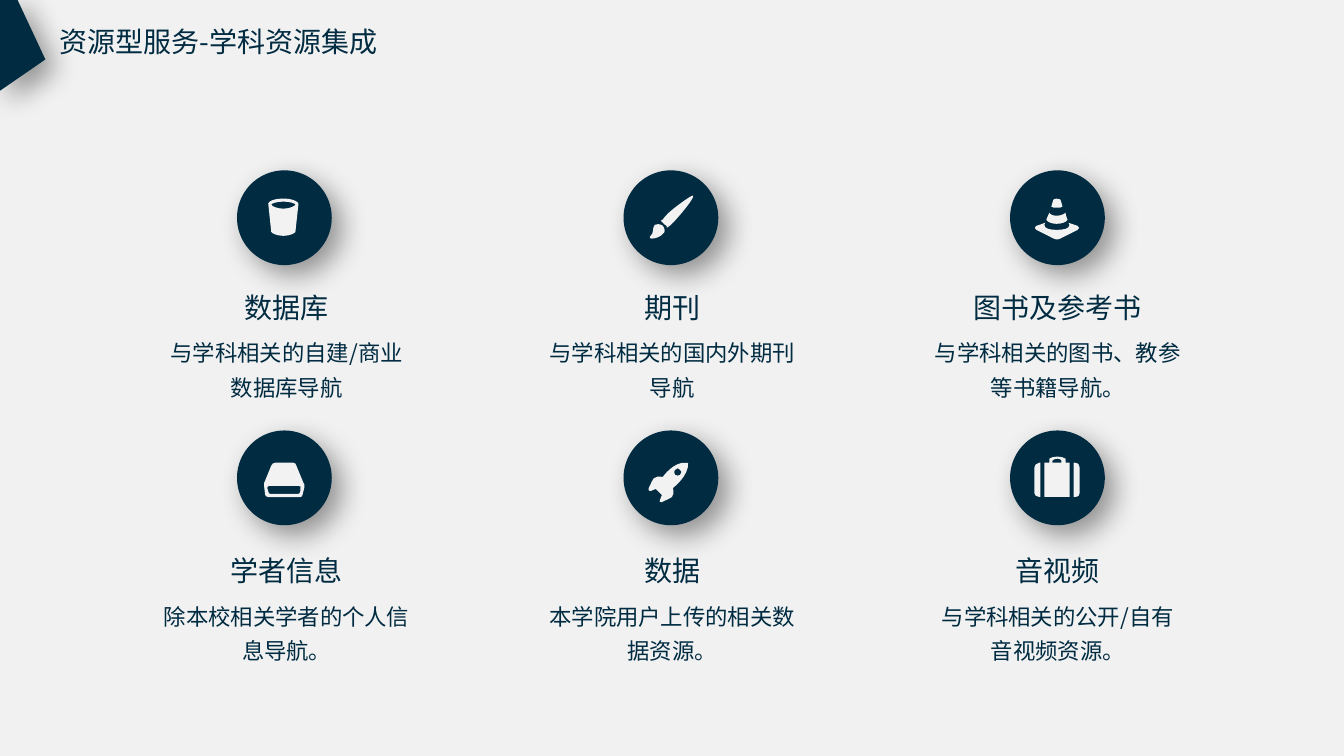
from dataclasses import dataclass

from lxml.etree import SubElement
from pptx import Presentation
from pptx.dml.color import RGBColor
from pptx.enum.shapes import MSO_SHAPE as Preset
from pptx.enum.text import MSO_ANCHOR as Anchor, MSO_AUTO_SIZE as AutoSize, PP_ALIGN as Align
from pptx.oxml.ns import qn
from pptx.shapes.base import BaseShape
from pptx.slide import Slide
from pptx.text.text import TextFrame
from pptx.util import Pt

COLORS = {"background": "F1F1F1", "navy": "002B41", "icon": "F2F2F2", "shadow": "000000"}
FONT = "Noto Sans CJK SC"
GRID_UNIT = 0.72
CIRCLE_SIZE = 67.7
CIRCLE_PITCH = (276.1, 185.8)
TEXT_PITCH = (275.4, 187.9)

Contour = list[tuple[int, ...]]

CORNER: list[Contour] = [[(17, -1), (0, -1), (0, 90), (45, 59)]]
BUCKET: list[Contour] = [
    [(46, 28), (36, 28, 31, 31, 31, 33), (34, 61), (34, 62, 39, 65, 46, 65),
     (53, 65, 58, 62, 58, 61), (61, 33), (61, 31, 55, 28, 46, 28)],
    [(46, 38), (39, 38, 34, 35, 34, 34), (34, 33, 39, 31, 46, 31),
     (53, 31, 58, 33, 58, 34), (58, 35, 53, 38, 46, 38)],
]
BRUSH: list[Contour] = [
    [(31, 54), (28, 58, 31, 62, 26, 66), (24, 69, 35, 68, 39, 63),
     (42, 61, 41, 58, 39, 55), (36, 53, 33, 53, 31, 54)],
    [(69, 25), (68, 24, 47, 39, 42, 45), (39, 48, 39, 50, 37, 50),
     (37, 51, 38, 51, 38, 51), (39, 52, 39, 52, 41, 54), (42, 54, 43, 55, 43, 56),
     (43, 57), (45, 56, 47, 54, 49, 52), (55, 46, 71, 27, 69, 25)],
]
CONE: list[Contour] = [
    [(46, 53), (52, 53, 56, 51, 57, 49), (56, 46, 55, 44, 55, 42),
     (54, 43, 51, 45, 46, 45), (42, 45, 39, 43, 39, 42),
     (38, 44, 37, 46, 36, 49), (37, 51, 41, 53, 46, 53)],
    [(46, 37), (49, 37, 51, 37, 52, 36), (51, 33, 51, 31, 50, 29),
     (50, 29, 48, 28, 46, 28), (45, 28, 43, 29, 43, 29),
     (42, 31, 42, 33, 41, 36), (42, 37, 44, 37, 46, 37)],
    [(67, 55), (58, 52), (59, 54), (59, 58, 53, 59, 46, 59), (40, 59, 34, 58, 34, 54),
     (35, 52), (26, 55), (24, 56, 24, 58, 26, 59), (42, 67), (45, 69, 48, 69, 51, 67),
     (67, 59), (69, 58, 69, 56, 67, 55)],
]
DRIVE: list[Contour] = [
    [(66, 52), (59, 35), (59, 33, 57, 32, 56, 32), (38, 32), (36, 32, 35, 33, 34, 35),
     (27, 52), (27, 52, 27, 55, 27, 56), (28, 64), (28, 65, 30, 66, 31, 66), (63, 66),
     (64, 66, 65, 65, 65, 64), (67, 56), (67, 55, 67, 52, 66, 52)],
    [(63, 57), (63, 60), (63, 62, 61, 63, 61, 63), (33, 63), (32, 63, 31, 62, 31, 60),
     (30, 57), (30, 56, 31, 55, 32, 55), (61, 55), (63, 55, 64, 56, 63, 57)],
]
ROCKET: list[Contour] = [
    [(49, 57), (49, 57, 65, 45, 64, 32), (63, 32), (50, 30, 39, 46, 39, 46),
     (29, 45, 30, 47, 25, 57), (24, 60, 26, 60, 27, 60), (29, 59, 32, 58, 32, 58),
     (38, 64), (38, 64, 37, 67, 36, 69), (35, 70, 36, 72, 38, 71), (48, 66, 51, 67, 49, 57)],
    [(51, 44), (50, 42, 50, 40, 51, 39), (53, 37, 55, 37, 56, 39),
     (58, 40, 58, 42, 56, 44), (55, 45, 53, 45, 51, 44)],
]
SUITCASE: list[Contour] = [
    [(64, 32), (63, 32), (63, 66), (64, 66), (68, 66, 69, 64, 69, 62), (69, 37),
     (69, 35, 68, 32, 64, 32)],
    [(24, 37), (24, 62), (24, 64, 26, 66, 29, 66), (30, 66), (30, 32), (29, 32),
     (26, 32, 24, 35, 24, 37)],
    [(55, 28), (53, 27, 51, 26, 47, 26), (43, 26, 40, 27, 39, 28), (39, 32), (34, 32),
     (34, 66), (59, 66), (59, 32), (55, 32)],
    [(51, 32), (42, 32), (42, 30), (43, 29, 44, 28, 47, 28), (49, 28, 51, 29, 51, 30)],
]


@dataclass(frozen=True)
class Resource:
    heading: str
    description: str
    icon: list[Contour]


@dataclass(frozen=True)
class TextStyle:
    left: float
    top: float
    width: float
    height: float
    size: int
    spacing: float


HEADING = TextStyle(136.3, 203.8, 136.8, 31.7, 20, 1.0)
DESCRIPTION = TextStyle(109.4, 233.3, 190.8, 57.6, 16, 1.3)
TITLE = TextStyle(35, 13.7, 245.5, 31.7, 20, 1.0)

RESOURCES = [
    Resource("数据库", "与学科相关的自建/商业数据库导航", BUCKET),
    Resource("期刊", "与学科相关的国内外期刊导航", BRUSH),
    Resource("图书及参考书", "与学科相关的图书、教参等书籍导航。", CONE),
    Resource("学者信息", "除本校相关学者的个人信息导航。", DRIVE),
    Resource("数据", "本学院用户上传的相关数据资源。", ROCKET),
    Resource("音视频", "与学科相关的公开/自有音视频资源。", SUITCASE),
]


def paint(shape: BaseShape, color: str, shadow: bool = False) -> None:
    shape.fill.solid()
    shape.fill.fore_color.rgb = RGBColor.from_string(COLORS[color])
    shape.line.fill.background()
    shape.shadow.inherit = False
    if shadow:
        effects = shape.element.spPr.find(qn("a:effectLst"))
        outer = SubElement(effects, qn("a:outerShdw"), blurRad=str(Pt(20)), dist=str(Pt(10)),
                           dir="2700000", algn="tl", rotWithShape="0")
        tint = SubElement(outer, qn("a:srgbClr"), val=COLORS["shadow"])
        SubElement(tint, qn("a:alpha"), val="40000")


def to_points(values: tuple[int, ...]) -> list[tuple[int, int]]:
    lengths = [Pt(value * GRID_UNIT) for value in values]
    return list(zip(lengths[::2], lengths[1::2]))


def draw_outline(slide: Slide, contours: list[Contour], left: float, top: float) -> BaseShape:
    corners = [[to_points(segment)[-1] for segment in contour] for contour in contours]
    builder = slide.shapes.build_freeform(*corners[0][0], scale=1.0)
    for index, points in enumerate(corners):
        if index:
            builder.move_to(*points[0])
        builder.add_line_segments(points[1:], close=True)
    shape = builder.convert_to_shape(Pt(left), Pt(top))
    min_x = min(x for points in corners for x, _ in points)
    min_y = min(y for points in corners for _, y in points)
    segments = [segment for contour in contours for segment in contour[1:]]
    lines = list(shape.element.iter(qn("a:lnTo")))
    for line, segment in zip(lines, segments):
        if len(segment) == 6:
            curve = SubElement(line.getparent(), qn("a:cubicBezTo"))
            for x, y in to_points(segment):
                SubElement(curve, qn("a:pt"), x=str(x - min_x), y=str(y - min_y))
            line.getparent().replace(line, curve)
    return shape


def write(text_frame: TextFrame, text: str, style: TextStyle, alignment: Align) -> None:
    text_frame.text = text
    text_frame.word_wrap = True
    text_frame.auto_size = AutoSize.SHAPE_TO_FIT_TEXT
    text_frame.vertical_anchor = Anchor.TOP
    paragraph = text_frame.paragraphs[0]
    paragraph.alignment = alignment
    paragraph.line_spacing = style.spacing
    for run in paragraph.runs:
        run.font.size = Pt(style.size)
        run.font.name = FONT
        run.font.color.rgb = RGBColor.from_string(COLORS["navy"])
        SubElement(run.font._element, qn("a:ea"), typeface=FONT)


def draw_text(slide: Slide, text: str, style: TextStyle, column: int, row: int) -> None:
    box = slide.shapes.add_textbox(Pt(style.left + column * TEXT_PITCH[0]),
                                   Pt(style.top + row * TEXT_PITCH[1]),
                                   Pt(style.width), Pt(style.height))
    write(box.text_frame, text, style, Align.CENTER)


def draw_resource(slide: Slide, resource: Resource, column: int, row: int) -> None:
    left, top = 169.3 + column * CIRCLE_PITCH[0], 121.7 + row * CIRCLE_PITCH[1]
    circle = slide.shapes.add_shape(Preset.OVAL, Pt(left), Pt(top), Pt(CIRCLE_SIZE), Pt(CIRCLE_SIZE))
    paint(circle, "navy", shadow=True)
    paint(draw_outline(slide, resource.icon, left, top), "icon")
    draw_text(slide, resource.heading, HEADING, column, row)
    draw_text(slide, resource.description, DESCRIPTION, column, row)


def main() -> None:
    presentation = Presentation()
    presentation.slide_width, presentation.slide_height = Pt(960), Pt(540)
    slide = presentation.slides.add_slide(presentation.slide_layouts[5])
    slide.background.fill.solid()
    slide.background.fill.fore_color.rgb = RGBColor.from_string(COLORS["background"])
    title = slide.shapes.title
    title.left, title.top = Pt(TITLE.left), Pt(TITLE.top)
    title.width, title.height = Pt(TITLE.width), Pt(TITLE.height)
    write(title.text_frame, "资源型服务-学科资源集成", TITLE, Align.LEFT)
    paint(draw_outline(slide, CORNER, 0, 0), "navy", shadow=True)
    for index, resource in enumerate(RESOURCES):
        row, column = divmod(index, 3)
        draw_resource(slide, resource, column, row)
    presentation.save("out.pptx")


if __name__ == "__main__":
    main()
